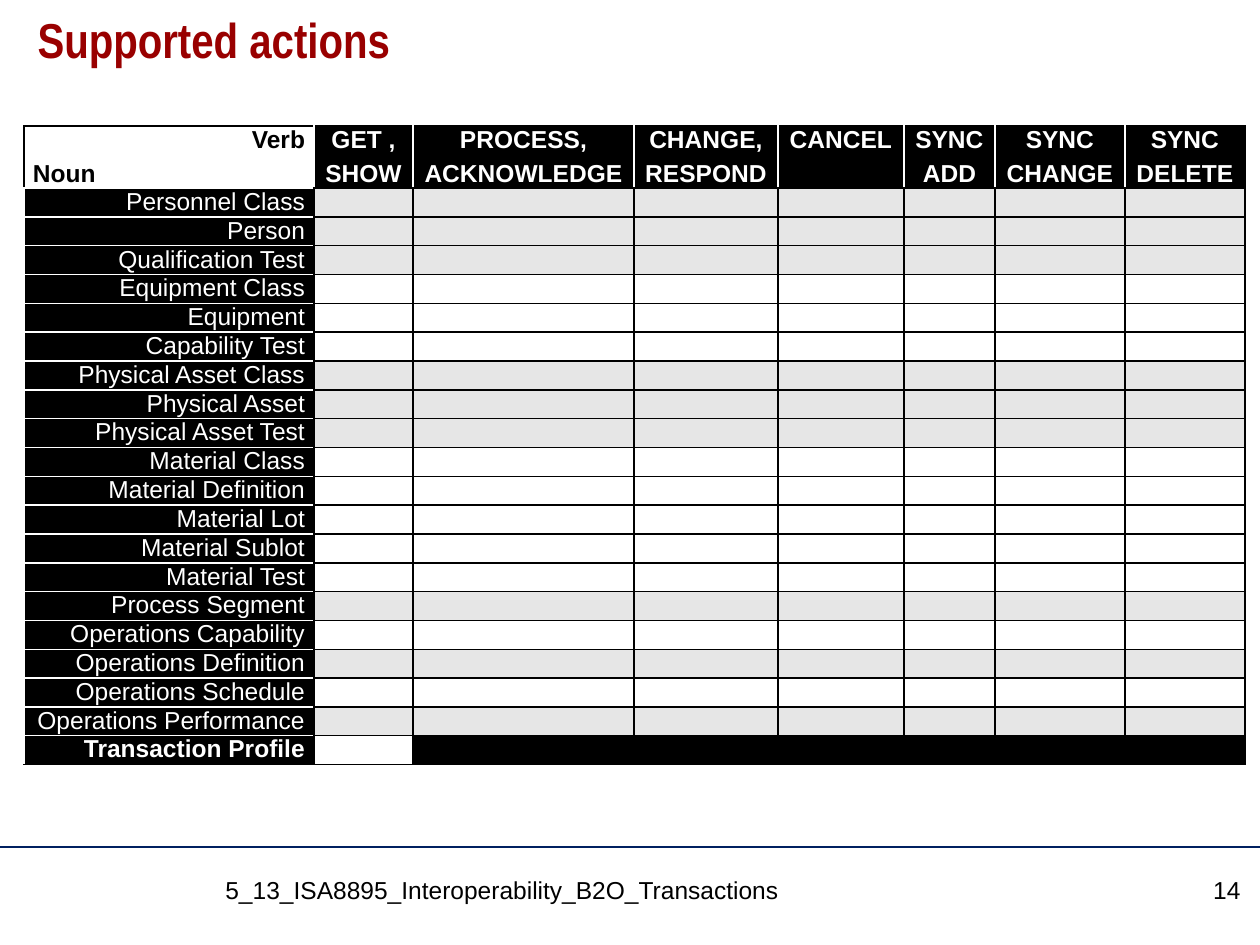
from dataclasses import dataclass

import lxml.etree
import pptx
import pptx.dml.color
import pptx.enum.shapes
import pptx.enum.text
import pptx.oxml.ns
import pptx.util

PIXELS_PER_INCH = 126
BLACK = pptx.dml.color.RGBColor(0x00, 0x00, 0x00)
WHITE = pptx.dml.color.RGBColor(0xFF, 0xFF, 0xFF)
SHADE = pptx.dml.color.RGBColor(0xE6, 0xE6, 0xE6)
TITLE_RED = pptx.dml.color.RGBColor(0x99, 0x00, 0x00)
RULE_NAVY = pptx.dml.color.RGBColor(0x00, 0x20, 0x60)

ALIGN = pptx.enum.text.PP_ALIGN
TITLE_FORMAT = {"name": "Arial Narrow", "size": pptx.util.Pt(28), "bold": True}
TEXT_FORMAT = {"name": "Arial", "size": pptx.util.Pt(14), "bold": False}
BOLD_FORMAT = {**TEXT_FORMAT, "bold": True}


@dataclass(frozen=True)
class Verb:
    lines: tuple[str, ...]
    width: int


@dataclass(frozen=True)
class NounGroup:
    nouns: tuple[str, ...]
    shaded: bool


@dataclass(frozen=True)
class Label:
    text: str
    left: int
    width: int
    alignment: ALIGN


VERBS = (
    Verb(("GET ,", "SHOW"), 99),
    Verb(("PROCESS,", "ACKNOWLEDGE"), 221),
    Verb(("CHANGE,", "RESPOND"), 144),
    Verb(("CANCEL",), 126),
    Verb(("SYNC", "ADD"), 91),
    Verb(("SYNC", "CHANGE"), 130),
    Verb(("SYNC", "DELETE"), 120),
)
NOUN_GROUPS = (
    NounGroup(("Personnel Class", "Person", "Qualification Test"), True),
    NounGroup(("Equipment Class", "Equipment", "Capability Test"), False),
    NounGroup(("Physical Asset Class", "Physical Asset", "Physical Asset Test"), True),
    NounGroup(("Material Class", "Material Definition", "Material Lot",
               "Material Sublot", "Material Test"), False),
    NounGroup(("Process Segment",), True),
    NounGroup(("Operations Capability",), False),
    NounGroup(("Operations Definition",), True),
    NounGroup(("Operations Schedule",), False),
    NounGroup(("Operations Performance",), True),
)
PROFILE = "Transaction Profile"
FOOTER_LABELS = (
    Label("5_13_ISA8895_Interoperability_B2O_Transactions", 213, 908, ALIGN.LEFT),
    Label("14", 1137, 116, ALIGN.RIGHT),
)
TABLE_LEFT, TABLE_TOP, TABLE_HEIGHT = 24, 126, 639
NOUN_WIDTH, HEADER_HEIGHT, CELL_MARGIN = 290, 62, 9


def px(length: int) -> int:
    return round(length * pptx.util.Inches(1) / PIXELS_PER_INCH)


def format_paragraph(paragraph, text: str, values: dict, color, alignment: ALIGN) -> None:
    paragraph.alignment = alignment
    run = paragraph.add_run()
    run.text = text
    for name, value in values.items():
        setattr(run.font, name, value)
    run.font.color.rgb = color


def write_cell(cell, lines, values: dict, color, alignments) -> None:
    frame = cell.text_frame
    for index, (text, alignment) in enumerate(zip(lines, alignments)):
        paragraph = frame.add_paragraph() if index else frame.paragraphs[0]
        if index:
            paragraph.space_before = pptx.util.Pt(4)
        format_paragraph(paragraph, text, values, color, alignment)


def style_cell(cell, fill, left=BLACK, right=BLACK, top=BLACK, bottom=BLACK) -> None:
    """Set margins, one-point borders and fill; a fill of None stays clear."""
    cell.margin_left = cell.margin_right = px(CELL_MARGIN)
    cell.margin_top = cell.margin_bottom = 0
    properties = cell._tc.get_or_add_tcPr()
    for side, color in zip("LRTB", (left, right, top, bottom)):
        line = lxml.etree.SubElement(properties, pptx.oxml.ns.qn(f"a:ln{side}"),
                                     w=str(pptx.util.Pt(1)))
        solid = lxml.etree.SubElement(line, pptx.oxml.ns.qn("a:solidFill"))
        lxml.etree.SubElement(solid, pptx.oxml.ns.qn("a:srgbClr"), val=str(color))
    if fill is None:
        cell.fill.background()
    else:
        cell.fill.solid()
        cell.fill.fore_color.rgb = fill


def shrink_empty_cell(cell) -> None:
    """Keep an empty paragraph from stretching its row."""
    paragraph = cell.text_frame.paragraphs[0]._p
    lxml.etree.SubElement(paragraph, pptx.oxml.ns.qn("a:endParaRPr"), sz="1000")


def add_header(table) -> None:
    corner = table.cell(0, 0)
    write_cell(corner, ("Verb", "Noun"), BOLD_FORMAT, BLACK, (ALIGN.RIGHT, ALIGN.LEFT))
    style_cell(corner, None, right=WHITE, bottom=WHITE)
    for column, verb in enumerate(VERBS, start=1):
        cell = table.cell(0, column)
        write_cell(cell, verb.lines, BOLD_FORMAT, WHITE, (ALIGN.CENTER,) * len(verb.lines))
        style_cell(cell, BLACK, left=WHITE,
                   right=BLACK if column == len(VERBS) else WHITE)


def add_noun_row(table, row: int, noun: str, fills, values: dict, bottom) -> None:
    noun_cell = table.cell(row, 0)
    write_cell(noun_cell, (noun,), values, WHITE, (ALIGN.RIGHT,))
    style_cell(noun_cell, BLACK, left=WHITE, top=WHITE, bottom=bottom)
    for column, fill in enumerate(fills, start=1):
        cell = table.cell(row, column)
        style_cell(cell, fill)
        shrink_empty_cell(cell)


def add_actions_table(slide) -> None:
    nouns = [(noun, SHADE if group.shaded else None)
             for group in NOUN_GROUPS for noun in group.nouns]
    widths = [NOUN_WIDTH, *(verb.width for verb in VERBS)]
    body_rows = len(nouns) + 1
    table = slide.shapes.add_table(
        body_rows + 1, len(widths), px(TABLE_LEFT), px(TABLE_TOP),
        px(sum(widths)), px(TABLE_HEIGHT)).table
    table.first_row = table.horz_banding = False
    for column, width in zip(table.columns, widths):
        column.width = px(width)
    for row in table.rows:
        row.height = px(TABLE_HEIGHT - HEADER_HEIGHT) // body_rows
    table.rows[0].height = px(HEADER_HEIGHT)

    add_header(table)
    for row, (noun, fill) in enumerate(nouns, start=1):
        add_noun_row(table, row, noun, [fill] * len(VERBS), TEXT_FORMAT, WHITE)
    profile_fills = [None] + [BLACK] * (len(VERBS) - 1)
    add_noun_row(table, body_rows, PROFILE, profile_fills, BOLD_FORMAT, BLACK)


def add_title(slide) -> None:
    title = slide.shapes.title
    title.left, title.top, title.width, title.height = map(px, (25, 10, 1211, 105))
    frame = title.text_frame
    frame.auto_size = pptx.enum.text.MSO_AUTO_SIZE.NONE
    frame.vertical_anchor = pptx.enum.text.MSO_ANCHOR.TOP
    paragraph = frame.paragraphs[0]
    paragraph.line_spacing = 0.9
    format_paragraph(paragraph, "Supported actions", TITLE_FORMAT, TITLE_RED, ALIGN.LEFT)


def add_footer(slide, slide_width: int) -> None:
    rule = slide.shapes.add_connector(
        pptx.enum.shapes.MSO_CONNECTOR.STRAIGHT, 0, px(847), slide_width, px(847))
    rule.line.color.rgb = RULE_NAVY
    rule.line.width = pptx.util.Pt(0.75)
    lxml.etree.SubElement(rule._element.spPr, pptx.oxml.ns.qn("a:effectLst"))
    for label in FOOTER_LABELS:
        box = slide.shapes.add_textbox(px(label.left), px(869), px(label.width), px(57))
        box.text_frame.word_wrap = True
        format_paragraph(box.text_frame.paragraphs[0], label.text, TEXT_FORMAT, BLACK,
                         label.alignment)


def main() -> None:
    presentation = pptx.Presentation()
    presentation.slide_width, presentation.slide_height = px(1260), px(945)
    slide = presentation.slides.add_slide(presentation.slide_layouts.get_by_name("Title Only"))
    add_title(slide)
    add_actions_table(slide)
    add_footer(slide, presentation.slide_width)
    presentation.save("out.pptx")


if __name__ == "__main__":
    main()
